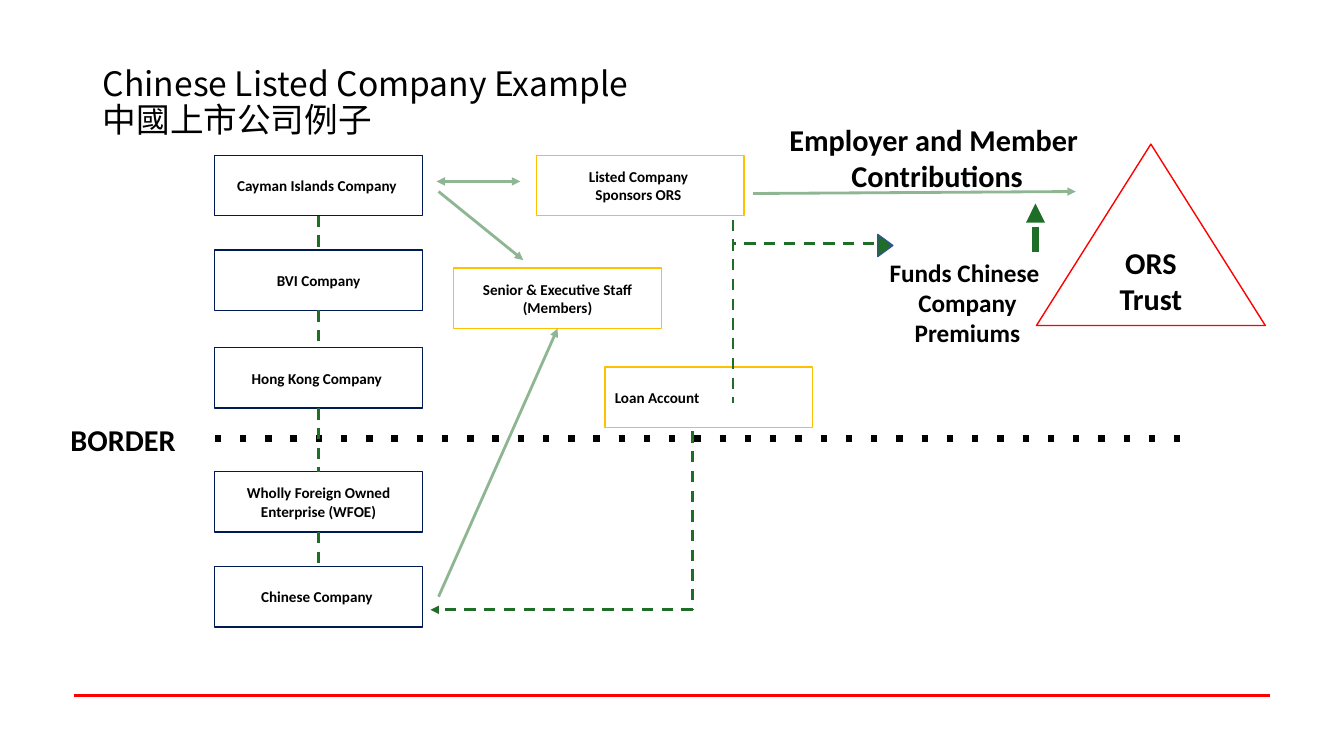
import pptx
import pptx.util
import pptx.oxml.ns
from lxml import etree
from pptx.dml.color import RGBColor
from pptx.enum.shapes import MSO_CONNECTOR, MSO_SHAPE
from pptx.enum.text import MSO_ANCHOR, MSO_AUTO_SIZE, PP_ALIGN

Inches = pptx.util.Inches
Pt = pptx.util.Pt
qn = pptx.oxml.ns.qn

BLACK = RGBColor(0x00, 0x00, 0x00)
NAVY = RGBColor(0x00, 0x1A, 0x54)
GOLD = RGBColor(0xFF, 0xC0, 0x00)
GREEN = RGBColor(0x1F, 0x6E, 0x27)
BLUE = RGBColor(0x31, 0x53, 0x8F)
RED = RGBColor(0xFF, 0x00, 0x00)

BOX_W, BOX_H = 2.06, 0.6
TOP, BOTTOM = 0, 2  # connection sites of a rectangle


def write(tf, text, size=10.8, font="Calibri", bold=True, align=PP_ALIGN.CENTER,
          anchor=MSO_ANCHOR.MIDDLE, spacing=None):
    """Fill a text frame; \\n starts a paragraph, \\v breaks a line."""
    tf.word_wrap = True
    tf.vertical_anchor = anchor
    tf.text = text
    for p in tf.paragraphs:
        p.alignment = align
        if spacing:
            p.line_spacing = spacing
        for r in p.runs:
            r.font.size = Pt(size)
            r.font.bold = bold
            r.font.color.rgb = BLACK
            r.font.name = font
            etree.SubElement(r.font._element, qn("a:ea"), typeface=font)


def add_outline(s, kind, x, y, w, h, color, fill=None):
    sp = s.shapes.add_shape(kind, Inches(x), Inches(y), Inches(w), Inches(h))
    sp.shadow.inherit = False
    if fill is None:
        sp.fill.background()
    else:
        sp.fill.solid()
        sp.fill.fore_color.rgb = fill
    sp.line.color.rgb = color
    sp.line.width = Pt(1)
    return sp


def add_box(s, x, y, text, color, **fmt):
    sp = add_outline(s, MSO_SHAPE.RECTANGLE, x, y, BOX_W, BOX_H, color)
    write(sp.text_frame, text, **fmt)
    return sp


def add_label(s, x, y, w, h, text, **fmt):
    sp = s.shapes.add_textbox(Inches(x), Inches(y), Inches(w), Inches(h))
    write(sp.text_frame, text, anchor=MSO_ANCHOR.TOP, **fmt)


def add_line(s, x1, y1, x2, y2, color=GREEN, width=2, dash="solid", alpha=None,
             head=False, tail=False):
    c = s.shapes.add_connector(MSO_CONNECTOR.STRAIGHT, Inches(x1), Inches(y1),
                               Inches(x2), Inches(y2))
    c.line.color.rgb = color
    c.line.width = Pt(width)
    ln = c.line._get_or_add_ln()
    if alpha:
        etree.SubElement(ln.find(".//" + qn("a:srgbClr")), qn("a:alpha"),
                         val=str(alpha * 1000))
    etree.SubElement(ln, qn("a:prstDash"), val=dash)
    for tag, shown in (("a:headEnd", head), ("a:tailEnd", tail)):
        if shown:
            etree.SubElement(ln, qn(tag), type="triangle")
    etree.SubElement(c._element.spPr, qn("a:effectLst"))
    return c


def add_dashes(s, *ends, **kw):
    return add_line(s, *ends, dash="dash", **kw)


def add_arrow(s, *ends, **kw):
    return add_line(s, *ends, alpha=50, tail=True, **kw)


def add_title(s, x, y, w, h):
    sp = s.shapes.title
    sp.left, sp.top, sp.width, sp.height = (Inches(v) for v in (x, y, w, h))
    write(sp.text_frame, "Chinese Listed Company Example\v中國上市公司例子", size=24,
          font="Noto Sans CJK TC", bold=False, align=PP_ALIGN.LEFT, spacing=0.9)
    sp.text_frame.auto_size = MSO_AUTO_SIZE.NONE


def add_border(s, x, y, w):
    add_line(s, x + 1.53, y + 0.22, x + w, y + 0.22, color=BLACK, width=4.5,
             dash="dot")
    add_label(s, x, y, 1.54, 0.46, "BORDER", size=21.6, align=PP_ALIGN.LEFT)


def add_ownership_chain(s, x, y):
    """Companies from the top holding down, each tied to the next."""
    companies = [
        (0, "Cayman Islands Company "),
        (0.94, "BVI Company"),
        (1.91, "Hong Kong Company "),
        (3.14, "Wholly Foreign Owned Enterprise (WFOE)"),
        (4.08, "Chinese Company "),
    ]
    boxes = [add_box(s, x, y + dy, name, NAVY) for dy, name in companies]
    mid = x + BOX_W / 2
    for upper, lower in zip(boxes, boxes[1:]):
        c = add_dashes(s, mid, y, mid, y + BOX_H)
        c.begin_connect(upper, BOTTOM)
        c.end_connect(lower, TOP)


def add_sponsor_and_staff(s, x, y):
    # Sponsor and members
    add_box(s, x + 0.99, y, "Listed Company \nSponsors ORS ", GOLD)
    staff = add_box(s, x + 0.17, y + 1.12, "Senior & Executive Staff\n(Members)", GOLD)
    # Arrows from the company chain
    add_arrow(s, x, y + 0.26, x + 0.83, y + 0.26, head=True)
    add_arrow(s, x + 0.02, y + 0.36, x + 0.86, y + 1.04)
    c = add_arrow(s, x + 0.02, y + 4.38, x + 1.2, y + 1.72)
    c.end_connect(staff, BOTTOM)


def add_loan(s, x, y):
    add_box(s, x, y, "Loan Account", GOLD, align=PP_ALIGN.LEFT)
    # Sponsor to loan, with a branch to the premiums
    add_dashes(s, x + 1.27, y - 1.46, x + 1.27, y + 0.36)
    add_dashes(s, x + 2.67, y - 1.22, x + 1.27, y - 1.22)
    tip = add_outline(s, MSO_SHAPE.ISOSCELES_TRIANGLE, x + 2.67, y - 1.28,
                      0.22, 0.15, BLUE, fill=GREEN)
    tip.rotation = 90
    # Loan to the Chinese company
    add_dashes(s, x + 0.87, y + 0.64, x + 0.87, y + 2.41)
    add_dashes(s, x + 0.87, y + 2.41, x - 1.73, y + 2.41, tail=True)


def add_trust(s, x, y):
    # Contributions
    add_arrow(s, x, y + 0.77, x + 3.2, y + 0.75)
    add_label(s, x + 0.06, y, 3.53, 0.83, "Employer and Member \nContributions", size=21.6)
    # Trust
    trust = add_outline(s, MSO_SHAPE.ISOSCELES_TRIANGLE, x + 2.81, y + 0.28,
                        2.27, 1.8, RED)
    write(trust.text_frame, "ORS Trust", size=21.6)
    # Premiums
    add_dashes(s, x + 2.8, y + 1.35, x + 2.8, y + 0.87, width=4.5, tail=True)
    add_label(s, x + 1.13, y + 1.35, 1.99, 1.01, "Funds Chinese \nCompany Premiums", size=18)


def main():
    prs = pptx.Presentation()
    prs.slide_width, prs.slide_height = Inches(13.33), Inches(7.5)
    s = prs.slides.add_slide(prs.slide_layouts[5])
    add_line(s, 0.73, 6.9, 12.6, 6.9, color=RED, width=1.5)
    add_title(s, 0.92, 0.3, 11.5, 1.45)
    add_border(s, 0.6, 4.13, 11.27)
    add_ownership_chain(s, 2.13, 1.54)
    add_sponsor_and_staff(s, 4.33, 1.54)
    add_trust(s, 7.47, 1.15)
    add_loan(s, 6, 3.64)
    prs.save("out.pptx")


if __name__ == "__main__":
    main()
